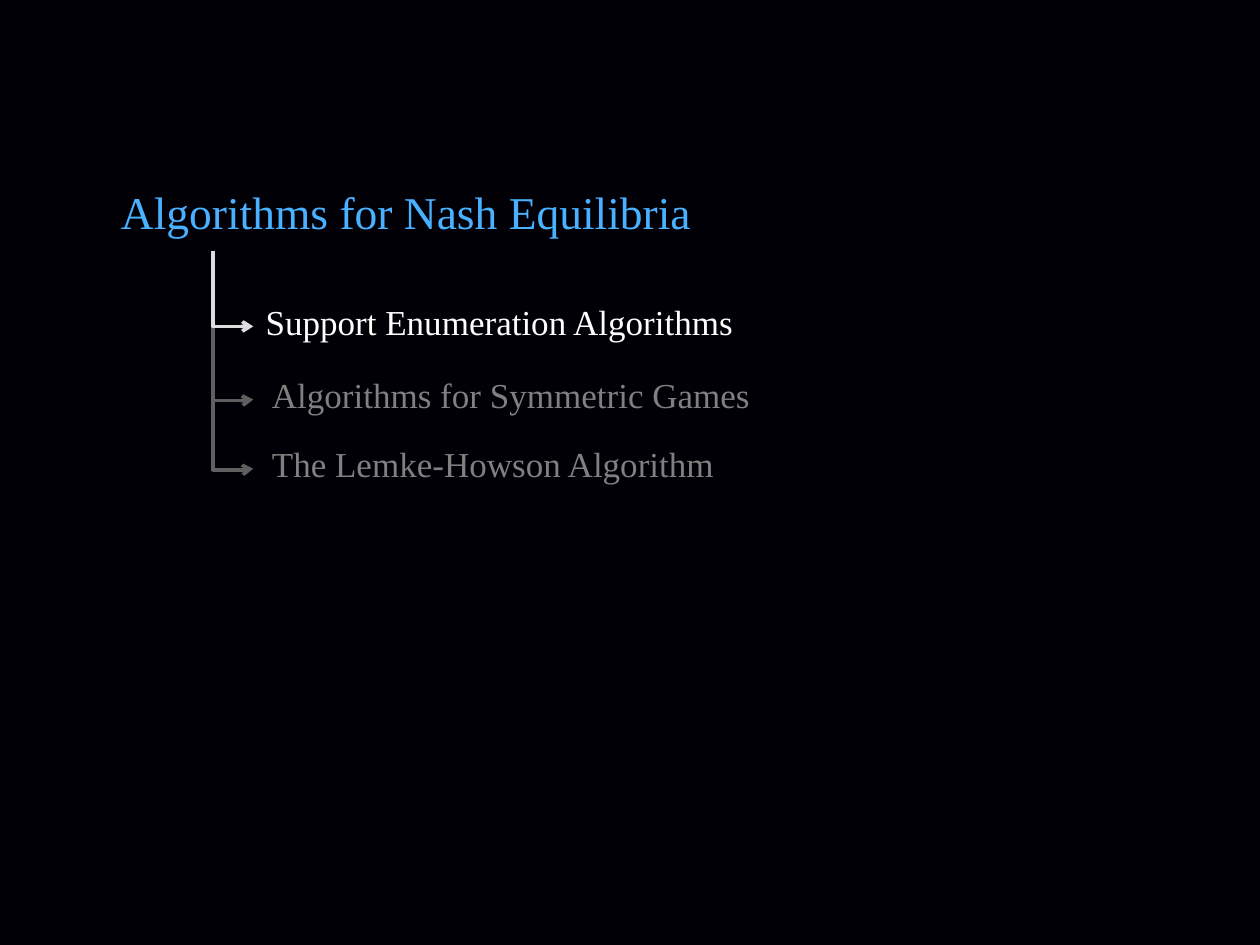
from lxml import etree
from pptx import Presentation
from pptx.dml.color import RGBColor
from pptx.enum.shapes import MSO_CONNECTOR
from pptx.enum.text import MSO_ANCHOR, MSO_AUTO_SIZE, PP_ALIGN
from pptx.oxml.ns import qn
from pptx.util import Inches, Pt

ELBOW = MSO_CONNECTOR.ELBOW
MIDDLE = MSO_ANCHOR.MIDDLE
LEFT = PP_ALIGN.LEFT
FIXED = MSO_AUTO_SIZE.NONE

NIGHT = RGBColor(0x01, 0x00, 0x06)
SKY = RGBColor(0x49, 0xB1, 0xFF)
WHITE = RGBColor(0xFF, 0xFF, 0xFF)
GRAY = RGBColor(0x80, 0x80, 0x80)
PALE_LINE = RGBColor(0xDD, 0xDD, 0xDD)
DARK_LINE = RGBColor(0x5F, 0x5F, 0x5F)

FONT = "Times New Roman"
WIDTH, HEIGHT = Inches(10), Inches(7.5)
TRUNK_LEFT = 16.9
ARROW_TIP = 20.1
ROW_HEIGHT = 5.87
ARROW_DROP = 3.47

TOPICS = [
    ("Algorithms for Symmetric Games", 20.6, 38.8, 40.3, 33.6, GRAY, DARK_LINE, 101500),
    ("The Lemke-Howson Algorithm", 20.6, 46.13, 37.4, 40.93, GRAY, DARK_LINE, 101500),
    ("Support Enumeration Algorithms", 20.1, 31.07, 39.4, 26.53, WHITE, PALE_LINE, 100100),
]


def across(percent):
    return round(WIDTH * percent / 100)


def down(percent):
    return round(HEIGHT * percent / 100)


def write_text(box, text, size, color):
    frame = box.text_frame
    frame.word_wrap = True
    frame.auto_size = FIXED
    frame.vertical_anchor = MIDDLE
    frame.text = text
    para = frame.paragraphs[0]
    para.alignment = LEFT
    para.font.name = FONT
    para.font.size = Pt(size)
    para.font.color.rgb = color


def add_title(page, text):
    title = page.shapes.title
    title.left, title.top = across(8.6), down(18.8)
    title.width, title.height = across(49.1), down(7.2)
    write_text(title, text, 26, SKY)


def add_branch(shapes, start, end, color, bend):
    run = across(ARROW_TIP - TRUNK_LEFT)
    drop = down(end - start)
    left = across((TRUNK_LEFT + ARROW_TIP) / 2) - drop // 2
    top = down((start + end) / 2) - run // 2
    branch = shapes.add_connector(ELBOW, left, top, left + drop, top + run)
    branch.line.color.rgb = color
    branch.line.width = Pt(2)

    properties = branch._element.spPr
    frame = properties.find(qn("a:xfrm"))
    frame.set("rot", "16200000")
    frame.set("flipH", "1")
    adjustments = properties.find(qn("a:prstGeom")).find(qn("a:avLst"))
    etree.SubElement(adjustments, qn("a:gd"), name="adj1", fmla=f"val {bend}")
    etree.SubElement(properties.find(qn("a:ln")), qn("a:tailEnd"), type="arrow")
    etree.SubElement(properties, qn("a:effectLst"))


def add_topic(page, text, left, top, width, trunk_top, color, line_color, bend):
    group = page.shapes.add_group_shape()
    box = group.shapes.add_textbox(across(left), down(top), across(width), down(ROW_HEIGHT))
    write_text(box, text, 20, color)
    add_branch(group.shapes, trunk_top, top + ARROW_DROP, line_color, bend)


def main():
    deck = Presentation()
    deck.slide_width, deck.slide_height = WIDTH, HEIGHT
    page = deck.slides.add_slide(deck.slide_layouts.get_by_name("Title Only"))
    page.background.fill.solid()
    page.background.fill.fore_color.rgb = NIGHT
    add_title(page, "Algorithms for Nash Equilibria")
    for topic in TOPICS:
        add_topic(page, *topic)
    deck.save("out.pptx")


if __name__ == "__main__":
    main()
